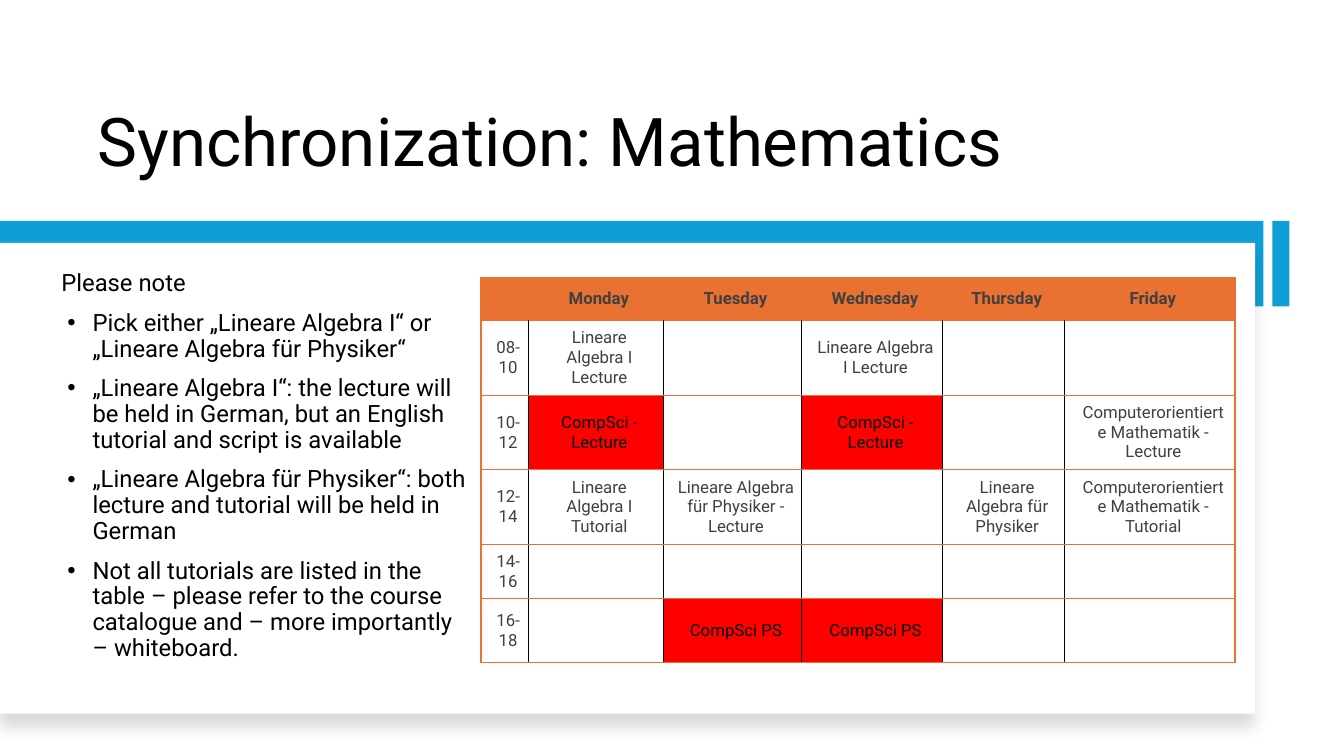
from lxml import etree
from pptx import Presentation
from pptx.dml.color import RGBColor
from pptx.enum.shapes import MSO_SHAPE
from pptx.enum.text import MSO_ANCHOR, PP_ALIGN
from pptx.oxml.ns import qn
from pptx.util import Inches, Pt

TITLE = "Synchronization: Mathematics"
LEAD = "Please note"
NOTES = [
    "Pick either „Lineare Algebra I“ or „Lineare Algebra für Physiker“",
    "„Lineare Algebra I“: the lecture will be held in German, but an English tutorial and script is available",
    "„Lineare Algebra für Physiker“: both lecture and tutorial will be held in German",
    "Not all tutorials are listed in the table – please refer to the course catalogue and – more importantly – whiteboard.",
]
PLAN = [
    ["", "Monday", "Tuesday", "Wednesday", "Thursday", "Friday"],
    ["08-10", "Lineare Algebra I Lecture", "", "Lineare Algebra I Lecture", "", ""],
    ["10-12", "CompSci - Lecture", "", "CompSci - Lecture", "",
     "Computerorientierte Mathematik - Lecture"],
    ["12-14", "Lineare Algebra I Tutorial", "Lineare Algebra für Physiker - Lecture", "",
     "Lineare Algebra für Physiker", "Computerorientierte Mathematik - Tutorial"],
    ["14-16", "", "", "", "", ""],
    ["16-18", "", "CompSci PS", "CompSci PS", "", ""],
]
COLS = [0.47, 1.34, 1.37, 1.4, 1.21, 1.69]
ROWS = [0.43, 0.73, 0.73, 0.73, 0.53, 0.63]

BLACK = RGBColor(0x00, 0x00, 0x00)
WHITE = RGBColor(0xFF, 0xFF, 0xFF)
GRAY = RGBColor(0x40, 0x40, 0x40)
BLUE = RGBColor(0x0F, 0x9E, 0xD5)
ORANGE = RGBColor(0xE9, 0x71, 0x32)
RED = RGBColor(0xFF, 0x00, 0x00)
FONT = "Roboto"
RECT = MSO_SHAPE.RECTANGLE
MIDDLE, TOP, BOTTOM = MSO_ANCHOR.MIDDLE, MSO_ANCHOR.TOP, MSO_ANCHOR.BOTTOM
CENTER = PP_ALIGN.CENTER


def add_bar(slide, box, color):
    bar = slide.shapes.add_shape(RECT, *map(Inches, box))
    bar.shadow.inherit = False
    bar.fill.solid()
    bar.fill.fore_color.rgb = color
    bar.line.fill.background()
    return bar


def cast_shade(shape):
    glow = shape._element.spPr.find(qn("a:effectLst"))
    shade = etree.SubElement(glow, qn("a:outerShdw"), blurRad=str(Pt(11)),
                             dist=str(Pt(10)), dir="5400000", algn="t", rotWithShape="0")
    tint = etree.SubElement(shade, qn("a:srgbClr"), val=str(BLACK))
    etree.SubElement(tint, qn("a:alpha"), val="15000")


def add_box(slide, box, anchor):
    frame = slide.shapes.add_textbox(*map(Inches, box)).text_frame
    frame.word_wrap = True
    frame.vertical_anchor = anchor
    return frame


def set_font(par, size, color, bold=False):
    font = par.font
    font.name, font.size, font.bold = FONT, Pt(size), bold
    font.color.rgb = color


def add_bullet(par):
    props = par._p.get_or_add_pPr()
    props.set("marL", str(Inches(0.31)))
    props.set("indent", str(Inches(-0.25)))
    etree.SubElement(props, qn("a:buFont"), typeface="Arial")
    etree.SubElement(props, qn("a:buChar"), char="•")


def set_edges(cell, edges):
    props = cell._tc.get_or_add_tcPr()
    for spot, (side, color) in enumerate(edges.items()):
        line = etree.Element(qn("a:ln" + side), w=str(Pt(1)))
        fill = etree.SubElement(line, qn("a:solidFill"))
        etree.SubElement(fill, qn("a:srgbClr"), val=str(color))
        props.insert(spot, line)


def fill_cell(cell, text, row, col):
    head = row == 0
    busy = text.startswith("CompSci")
    cell.fill.solid()
    cell.fill.fore_color.rgb = ORANGE if head else RED if busy else WHITE
    cell.vertical_anchor = MIDDLE
    pad = Inches(0.08 if head else 0.07)
    cell.margin_left = Inches(0.14)
    cell.margin_top = cell.margin_right = cell.margin_bottom = pad
    cell.text = text
    par = cell.text_frame.paragraphs[0]
    par.alignment = CENTER
    set_font(par, 12, BLACK if busy else GRAY, head)
    left = ORANGE if head or col == 0 else BLACK
    right = ORANGE if head or col == len(COLS) - 1 else BLACK
    set_edges(cell, {"L": left, "R": right, "T": ORANGE, "B": ORANGE})


def add_plan(slide):
    shape = slide.shapes.add_table(len(ROWS), len(COLS), Inches(4.77), Inches(2.75),
                                   Inches(sum(COLS)), Inches(sum(ROWS)))
    table = shape.table
    for col, width in zip(table.columns, COLS):
        col.width = Inches(width)
    for row, height in zip(table.rows, ROWS):
        row.height = Inches(height)
    for r, line in enumerate(PLAN):
        for c, text in enumerate(line):
            fill_cell(table.cell(r, c), text, r, c)


def main():
    deck = Presentation()
    deck.slide_width, deck.slide_height = Inches(13.33), Inches(7.5)
    slide = deck.slides.add_slide(deck.slide_layouts[6])

    title = add_box(slide, (0.87, 0.42, 11.01, 1.42), BOTTOM).paragraphs[0]
    title.text = TITLE
    title.line_spacing = 0.9
    set_font(title, 48, BLACK)

    add_bar(slide, (0, 2.19, 12.53, 0.85), BLUE)
    cast_shade(add_bar(slide, (0, 2.41, 12.45, 4.67), WHITE))
    add_bar(slide, (12.62, 2.19, 0.17, 0.85), BLUE)

    frame = add_box(slide, (0.51, 2.64, 4.26, 3.98), TOP)
    for i, text in enumerate([LEAD] + NOTES):
        par = frame.add_paragraph() if i else frame.paragraphs[0]
        par.text = text
        par.line_spacing = 0.9
        if i:
            par.space_before = Pt(10)
            add_bullet(par)
        set_font(par, 17, BLACK)

    add_plan(slide)
    deck.save("out.pptx")


if __name__ == "__main__":
    main()
